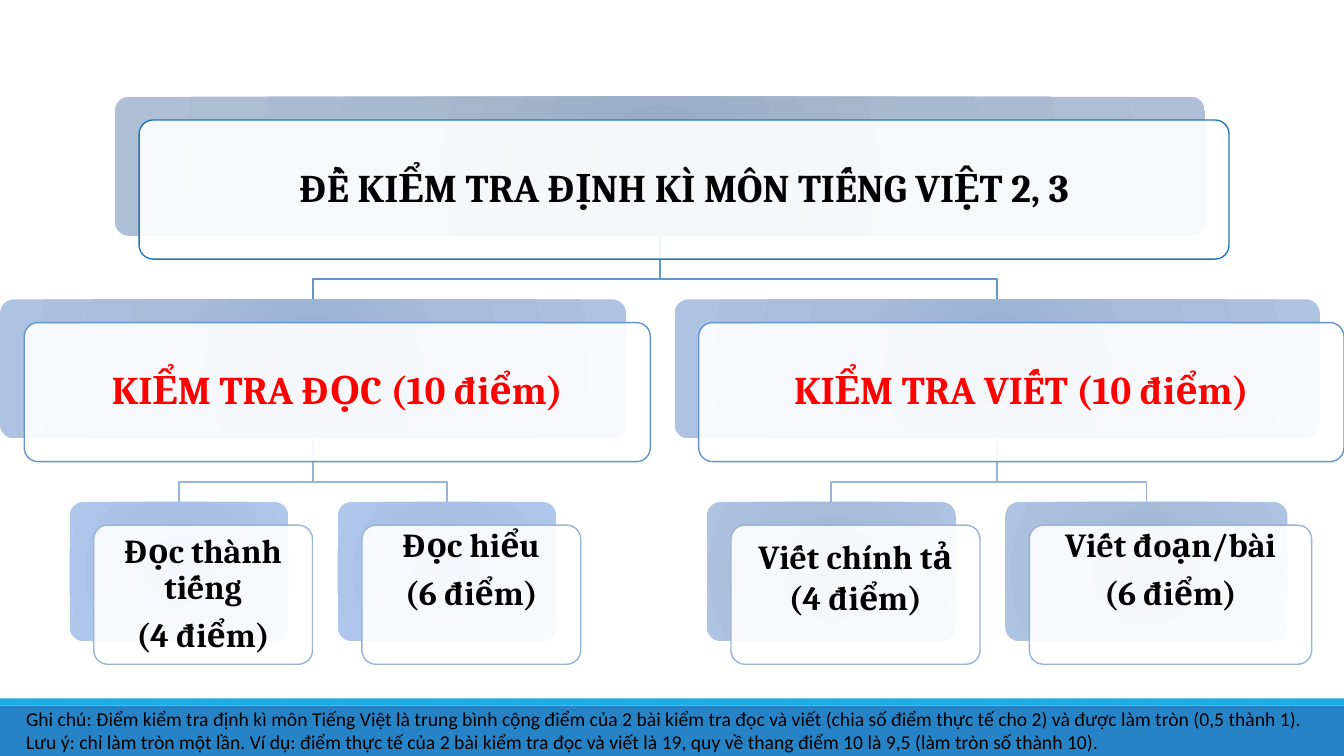
from dataclasses import dataclass

from lxml.etree import SubElement
from pptx import Presentation
from pptx.dml.color import RGBColor
from pptx.enum.shapes import MSO_SHAPE as Shape
from pptx.enum.text import MSO_ANCHOR as Anchor, MSO_AUTO_SIZE as AutoSize, PP_ALIGN as Align
from pptx.oxml.ns import qn
from pptx.util import Inches, Pt

BLACK = RGBColor(0x00, 0x00, 0x00)
RED = RGBColor(0xFF, 0x00, 0x00)
WHITE = RGBColor(0xFF, 0xFF, 0xFF)
FOOTER_BLUE = RGBColor(0x26, 0x83, 0xC6)
FOOTER_CYAN = RGBColor(0x1C, 0xAD, 0xE4)
TOP_LINE = RGBColor(0x22, 0x77, 0xB4)
MIDDLE_LINE = RGBColor(0x62, 0x96, 0xCD)
LEAF_LINE = RGBColor(0x99, 0xB4, 0xD9)
GREY_GLOW = ("97AAC6", "A8B8CF", "AFBFD7")
BLUE_GLOW = ("96AFD1", "A7BCD9", "AEC2E1")
LIGHT_GLOW = ("96B4DD", "A8C0E3", "AEC7EB")

CARD_HEIGHT = 1.38
CARD_OFFSET = 0.24
ELBOW_GAP = 0.2
TITLE = "ĐỀ KIỂM TRA ĐỊNH KÌ MÔN TIẾNG VIỆT 2, 3"
NOTE = (
    "Ghi chú: Điểm kiểm tra định kì môn Tiếng Việt là trung bình cộng điểm của 2 bài "
    "kiểm tra đọc và viết (chia số điểm thực tế cho 2) và được làm tròn (0,5 thành 1). "
    "Lưu ý: chỉ làm tròn một lần. Ví dụ: điểm thực tế của 2 bài kiểm tra đọc và viết là 19, "
    "quy về thang điểm 10 là 9,5 (làm tròn số thành 10)."
)


@dataclass
class Card:
    left: float
    top: float
    width: float
    glow: tuple
    line: RGBColor
    lines: tuple = ()
    size: int = 24
    color: RGBColor = BLACK
    bottom_inset: float = 0.1
    line_spacing: float = 0.9
    space_after: int = 8
    children: tuple = ()

    @property
    def center(self):
        return self.left + self.width / 2


class ChartSlide:
    heading_font = "Cambria"
    note_font = "Calibri"

    def __init__(self, presentation):
        self.slide = presentation.slides.add_slide(presentation.slide_layouts[5])
        self.shapes = self.slide.shapes

    def box(self, kind, left, top, width, height):
        shape = self.shapes.add_shape(
            kind, Inches(left), Inches(top), Inches(width), Inches(height))
        shape.shadow.inherit = False
        shape.line.fill.background()
        return shape

    def bar(self, top, height, color):
        shape = self.box(Shape.RECTANGLE, 0, top, 13.33, height)
        shape.fill.solid()
        shape.fill.fore_color.rgb = color

    def glow(self, shape, colors):
        shape.fill.gradient()
        gradient = shape.element.spPr.find(qn("a:gradFill"))
        for child in list(gradient):
            gradient.remove(child)
        stops = SubElement(gradient, qn("a:gsLst"))
        for position, color in zip((0, 45000, 100000), colors):
            stop = SubElement(stops, qn("a:gs"), pos=str(position))
            SubElement(stop, qn("a:srgbClr"), val=color)
        circle = SubElement(gradient, qn("a:path"), path="circle")
        SubElement(circle, qn("a:fillToRect"), l="100000", t="100000", r="100000", b="100000")

    def label(self, frame, card):
        frame.word_wrap = True
        frame.auto_size = AutoSize.NONE
        frame.vertical_anchor = Anchor.MIDDLE
        frame.margin_left = frame.margin_right = frame.margin_top = Inches(0.1)
        frame.margin_bottom = Inches(card.bottom_inset)
        frame.text = "\n".join(card.lines)
        for paragraph in frame.paragraphs:
            paragraph.alignment = Align.CENTER
            paragraph.line_spacing = card.line_spacing
            paragraph.space_after = Pt(card.space_after)
            paragraph.font.name = self.heading_font
            paragraph.font.size = Pt(card.size)
            paragraph.font.bold = True
            paragraph.font.color.rgb = card.color

    def card(self, card):
        back = self.box(Shape.ROUNDED_RECTANGLE, card.left, card.top, card.width, CARD_HEIGHT)
        front = self.box(Shape.ROUNDED_RECTANGLE, card.left + CARD_OFFSET,
                         card.top + CARD_OFFSET - 0.01, card.width, CARD_HEIGHT)
        back.adjustments[0] = front.adjustments[0] = 0.1
        self.glow(back, card.glow)
        front.fill.solid()
        front.fill.fore_color.rgb = WHITE
        SubElement(front.element.spPr.find(f"{qn('a:solidFill')}/{qn('a:srgbClr')}"),
                   qn("a:alpha"), val="90000")
        front.line.color.rgb = card.line
        front.line.width = Pt(1)
        if card.lines:
            self.label(front.text_frame, card)
        for child in card.children:
            self.card(child)

    def branches(self, parent):
        for child in parent.children:
            self.branches(child)
            elbow = child.top - ELBOW_GAP
            points = [(parent.center, elbow), (child.center, elbow), (child.center, child.top)]
            builder = self.shapes.build_freeform(
                Inches(parent.center), Inches(parent.top + CARD_HEIGHT))
            builder.add_line_segments([(Inches(x), Inches(y)) for x, y in points], close=False)
            branch = builder.convert_to_shape()
            branch.shadow.inherit = False
            branch.fill.background()
            branch.line.color.rgb = child.line
            branch.line.width = Pt(1.25)

    def title(self, card, text):
        title = self.shapes.title
        title.left, title.top = Inches(card.left + 0.28), Inches(card.top + 0.27)
        title.width, title.height = Inches(card.width - 0.08), Inches(1.3)
        self.label(title.text_frame, Card(0, 0, 0, (), BLACK, (text,), 28))
        self.shapes.element.append(title.element)

    def note(self, text):
        box = self.shapes.add_textbox(Inches(0.16), Inches(6.96), Inches(13.01), Inches(0.54))
        box.text_frame.word_wrap = True
        paragraph = box.text_frame.paragraphs[0]
        paragraph.text = text
        paragraph.font.name = self.note_font
        paragraph.font.size = Pt(14)
        paragraph.font.color.rgb = BLACK


def main():
    presentation = Presentation()
    presentation.slide_width = Inches(13.33)
    presentation.slide_height = Inches(7.5)

    reading_aloud = Card(0.69, 4.98, 2.17, LIGHT_GLOW, LEAF_LINE,
                         ("Đọc thành tiếng", "(4 điểm)"))
    comprehension = Card(3.35, 4.98, 2.17, LIGHT_GLOW, LEAF_LINE,
                         ("Đọc hiểu", "(6 điểm)"), bottom_inset=0.58)
    dictation = Card(7.01, 4.98, 2.47, BLUE_GLOW, LEAF_LINE, ("Viết chính tả", "(4 điểm)"),
                     bottom_inset=0.46, line_spacing=1, space_after=0)
    composition = Card(9.97, 4.98, 2.8, BLUE_GLOW, LEAF_LINE,
                       ("Viết đoạn/bài", "(6 điểm)"), bottom_inset=0.58)
    reading = Card(0, 2.97, 6.21, BLUE_GLOW, MIDDLE_LINE, ("KIỂM TRA ĐỌC (10 điểm)",),
                   28, RED, children=(reading_aloud, comprehension))
    writing = Card(6.69, 2.97, 6.4, BLUE_GLOW, MIDDLE_LINE, ("KIỂM TRA VIẾT (10 điểm)",),
                   28, RED, children=(dictation, composition))
    exam = Card(1.14, 0.96, 10.81, GREY_GLOW, TOP_LINE, children=(reading, writing))

    chart = ChartSlide(presentation)
    chart.bar(7, 0.5, FOOTER_BLUE)
    chart.bar(6.93, 0.07, FOOTER_CYAN)
    chart.branches(exam)
    chart.card(exam)
    chart.title(exam, TITLE)
    chart.note(NOTE)
    presentation.save("out.pptx")


if __name__ == "__main__":
    main()
